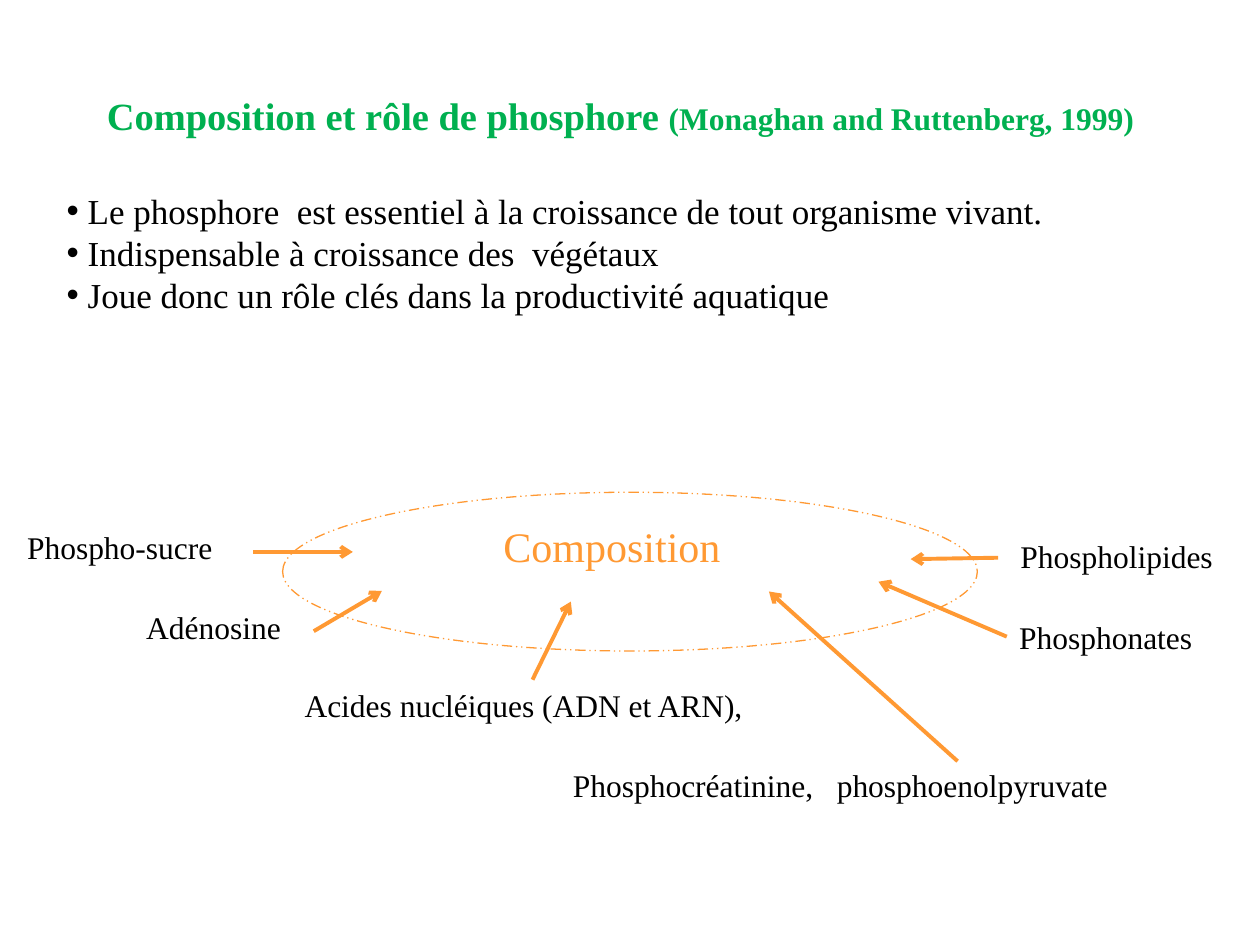
from lxml import etree
from pptx import Presentation
from pptx.dml.color import RGBColor
from pptx.enum.dml import MSO_LINE
from pptx.enum.shapes import MSO_CONNECTOR, MSO_SHAPE
from pptx.oxml.ns import qn
from pptx.util import Pt

STRAIGHT = MSO_CONNECTOR.STRAIGHT
OVAL = MSO_SHAPE.OVAL
DASH = MSO_LINE.DASH_DOT_DOT

GREEN, BLACK, ORANGE = "00B050", "000000", "FF9933"


def rgb(color):
    return RGBColor.from_string(color)


class Deck:
    font = "Times New Roman"

    def __init__(self, width, height):
        self.prs = Presentation()
        self.prs.slide_width, self.prs.slide_height = Pt(width), Pt(height)
        self.s = self.prs.slides.add_slide(self.prs.slide_layouts[6])

    def text(self, box, paragraphs, size=18, color=BLACK, bold=False,
             wrap=False, bullet_indent=0):
        """Each paragraph is a list of (text, size or None) runs."""
        tf = self.s.shapes.add_textbox(*map(Pt, box)).text_frame
        tf.word_wrap = wrap
        for i, runs in enumerate(paragraphs):
            p = tf.paragraphs[0] if i == 0 else tf.add_paragraph()
            p.font.name, p.font.size = self.font, Pt(size)
            p.font.bold, p.font.color.rgb = bold, rgb(color)
            for words, run_size in runs:
                r = p.add_run()
                r.text = words
                if run_size:
                    r.font.size = Pt(run_size)
            if bullet_indent:
                self.bullet(p, bullet_indent)

    def bullet(self, p, indent):
        pPr = p._p.get_or_add_pPr()
        pPr.set("marL", str(Pt(indent)))
        pPr.set("indent", str(-Pt(indent)))
        # Bullet elements come before the default run properties
        font = etree.Element(qn("a:buFont"), typeface="Arial")
        char = etree.Element(qn("a:buChar"), char="•")
        pPr.insert(0, font)
        font.addnext(char)

    def arrow(self, start, end, color=ORANGE, width=2.25):
        sp = self.s.shapes.add_connector(STRAIGHT, *map(Pt, start + end))
        sp.line.color.rgb, sp.line.width = rgb(color), Pt(width)
        etree.SubElement(sp.get_or_add_ln(), qn("a:tailEnd"), type="arrow")
        etree.SubElement(sp._element.spPr, qn("a:effectLst"))

    def ellipse(self, box, color=ORANGE, width=0.75):
        sp = self.s.shapes.add_shape(OVAL, *map(Pt, box))
        sp.shadow.inherit = False
        sp.fill.background()
        sp.line.color.rgb, sp.line.width = rgb(color), Pt(width)
        sp.line.dash_style = DASH


def main():
    deck = Deck(720, 540)

    # Title
    deck.text((54, 49, 612, 34),
              [[("Composition et rôle de phosphore ", None),
                ("(Monaghan and Ruttenberg, 1999)", 18)]],
              size=22, color=GREEN, bold=True, wrap=True)

    # Role of phosphorus
    facts = ["Le phosphore  est essentiel à la croissance de tout organisme vivant.",
             "Indispensable à croissance des  végétaux",
             "Joue donc un rôle clés dans la productivité aquatique"]
    deck.text((31, 105, 663, 80), [[(fact, None)] for fact in facts],
              size=20, wrap=True, bullet_indent=12)

    # Compounds: label, left, top, width
    compounds = [("Phospho-sucre", 8.4, 298.4, 130),
                 ("Adénosine", 76.5, 343.8, 97),
                 ("Acides nucléiques (ADN et ARN),", 167, 388.4, 274),
                 ("Phospholipides", 576, 303.4, 134),
                 ("Phosphonates", 575.3, 349.5, 124),
                 ("Phosphocréatinine,   phosphoenolpyruvate", 320.3, 434.2, 391)]
    for label, left, top, width in compounds:
        # Only the longest label has a box of fixed width
        deck.text((left, top, width, 29), [[(label, None)]], wrap=width > 300)

    # Arrows from the compounds into the ellipse
    arrows = [((144.7, 315.4), (201.6, 315.4)),
              ((179.3, 360.7), (218.2, 337.7)),
              ((304.3, 388.4), (326.2, 343.8)),
              ((547.2, 435), (439.4, 338)),
              ((570.4, 318.7), (520.4, 319.5)),
              ((575.3, 363.8), (502, 332.4))]
    for start, end in arrows:
        deck.arrow(start, end)

    # Central ellipse
    deck.ellipse((161.5, 281.3, 397, 90.7))
    deck.text((280.6, 293.8, 146, 36), [[("Composition", None)]],
              size=24, color=ORANGE)

    deck.prs.save("out.pptx")


if __name__ == "__main__":
    main()
